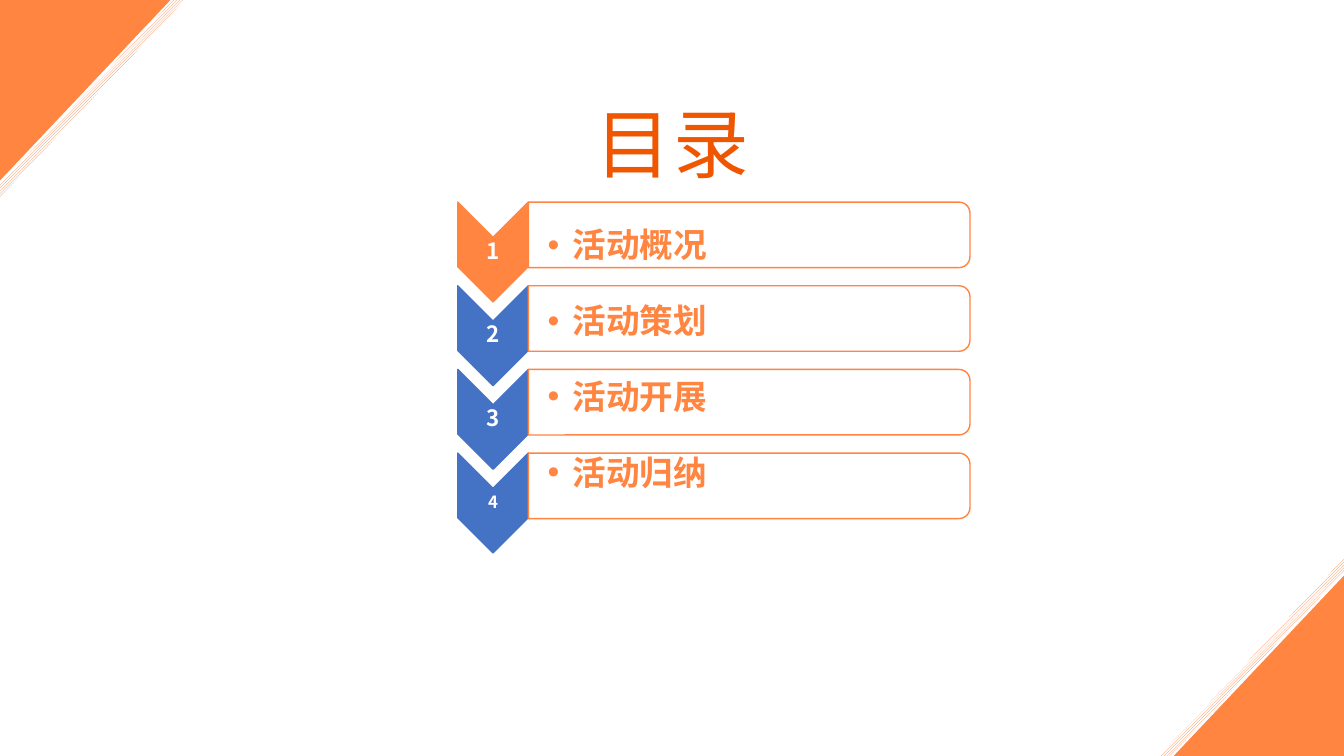
import dataclasses

import pptx
import pptx.dml.color
import pptx.enum.dml
import pptx.enum.shapes
import pptx.enum.text
import pptx.oxml.ns
import pptx.util
from lxml import etree

Inches, Pt = pptx.util.Inches, pptx.util.Pt
RGB = pptx.dml.color.RGBColor.from_string
SHAPE = pptx.enum.shapes.MSO_SHAPE
ALIGN = pptx.enum.text.PP_ALIGN
MIDDLE = pptx.enum.text.MSO_ANCHOR.MIDDLE
qn = pptx.oxml.ns.qn


@dataclasses.dataclass(frozen=True)
class Theme:
    font: str = "Noto Sans CJK SC"
    orange: str = "FF8541"
    dark_orange: str = "F05600"
    blue: str = "4472C4"
    white: str = "FFFFFF"
    title: int = 54
    item: int = 24
    number: int = 16
    small_number: int = 12


theme = Theme()
WIDTH, HEIGHT = 13.33, 7.5
ITEMS = ["活动概况", "活动策划", "活动开展", "活动归纳"]
PITCH = 0.83


def style_text(p, size, color, bold, align):
    p.alignment = align
    for r in p.runs:
        r.font.size = Pt(size)
        r.font.bold = bold
        r.font.name = theme.font
        r.font.color.rgb = RGB(color)
        etree.SubElement(r.font._element, qn("a:ea"), typeface=theme.font)


def add_turned(kind, center_x, center_y, length, breadth, fill, line):
    """Add a preset shape turned a quarter clockwise about its centre."""
    sp = s.shapes.add_shape(kind, Inches(center_x - length / 2), Inches(center_y - breadth / 2),
                            Inches(length), Inches(breadth))
    sp.rotation = 90
    sp.shadow.inherit = False
    sp.fill.solid()
    sp.fill.fore_color.rgb = RGB(fill)
    sp.line.color.rgb = RGB(line)
    sp.line.width = Pt(1)
    return sp


prs = pptx.Presentation()
prs.slide_width, prs.slide_height = Inches(WIDTH), Inches(HEIGHT)
s = prs.slides.add_slide(prs.slide_layouts[1])
title, body = s.placeholders

# Corner triangles with hatched bands, mirrored through the slide centre
triangle = [(0, 0), (1.69, 0), (0, 1.79)]
band = [(1.72, 0), (1.83, 0), (0, 1.96), (0, 1.83)]
for mirrored in (False, True):
    for outline in (triangle, band):
        points = [(Inches(WIDTH - x), Inches(HEIGHT - y)) if mirrored else (Inches(x), Inches(y))
                  for x, y in outline]
        builder = s.shapes.build_freeform(*points[0])
        builder.add_line_segments(points[1:], close=True)
        corner = builder.convert_to_shape()
        corner.shadow.inherit = False
        corner.line.fill.background()
        if outline is triangle:
            corner.fill.solid()
        else:
            corner.fill.patterned()
            corner.fill.pattern = pptx.enum.dml.MSO_PATTERN.LIGHT_UPWARD_DIAGONAL
            corner.fill.back_color.rgb = RGB(theme.white)
        corner.fill.fore_color.rgb = RGB(theme.orange)

# Numbered chevrons and their frames
for i in range(len(ITEMS)):
    offset = i * PITCH
    color = theme.blue if i else theme.orange
    add_turned(SHAPE.CHEVRON, 4.89, 2.5 + offset, 0.99, 0.7, color, color)
    frame = add_turned(SHAPE.ROUND_2_SAME_RECTANGLE, 7.43, 2.33 + offset, 0.65, 4.38,
                       theme.white, theme.orange)
    white = frame.fill._xPr.find(".//" + qn("a:srgbClr"))
    etree.SubElement(white, qn("a:alpha"), val="90000")

    number = s.shapes.add_textbox(Inches(4.54), Inches(2.35 + offset), Inches(0.7), Inches(0.3))
    tf = number.text_frame
    tf.word_wrap = True
    tf.vertical_anchor = MIDDLE
    tf.margin_left = tf.margin_right = tf.margin_top = tf.margin_bottom = Inches(0.01)
    tf.text = str(i + 1)
    last = i == len(ITEMS) - 1
    style_text(tf.paragraphs[0], theme.small_number if last else theme.number,
               theme.white, True, ALIGN.CENTER)
    tf.paragraphs[0].line_spacing = 0.9

# Agenda list, one paragraph per frame
s.shapes.element.append(body.element)
body.left, body.top = Inches(5.24), Inches(2.04)
body.width, body.height = Inches(4.35), Inches(0.58 + PITCH * (len(ITEMS) - 1))
tf = body.text_frame
tf.vertical_anchor = MIDDLE
tf.margin_left = Inches(0.19)
tf.margin_right = tf.margin_top = tf.margin_bottom = Inches(0.02)
tf.text = "\n".join(ITEMS)
for i, p in enumerate(tf.paragraphs):
    style_text(p, theme.item, theme.orange, True, ALIGN.LEFT)
    p.line_spacing = 0.9
    p.space_before = Pt(28.3 if i else 0)
    pPr = p._p.get_or_add_pPr()
    pPr.set("marL", str(Inches(0.25)))
    pPr.set("indent", str(Inches(-0.25)))
    etree.SubElement(pPr, qn("a:buChar"), char="•")

s.shapes.element.append(title.element)
title.left, title.top = Inches(5.62), Inches(0.91)
title.width, title.height = Inches(2.09), Inches(1.01)
title.text_frame.text = "目录"
title.text_frame.vertical_anchor = MIDDLE
p = title.text_frame.paragraphs[0]
style_text(p, theme.title, theme.dark_orange, False, ALIGN.CENTER)
p.runs[0].font._element.set("spc", "150")

prs.save("out.pptx")
